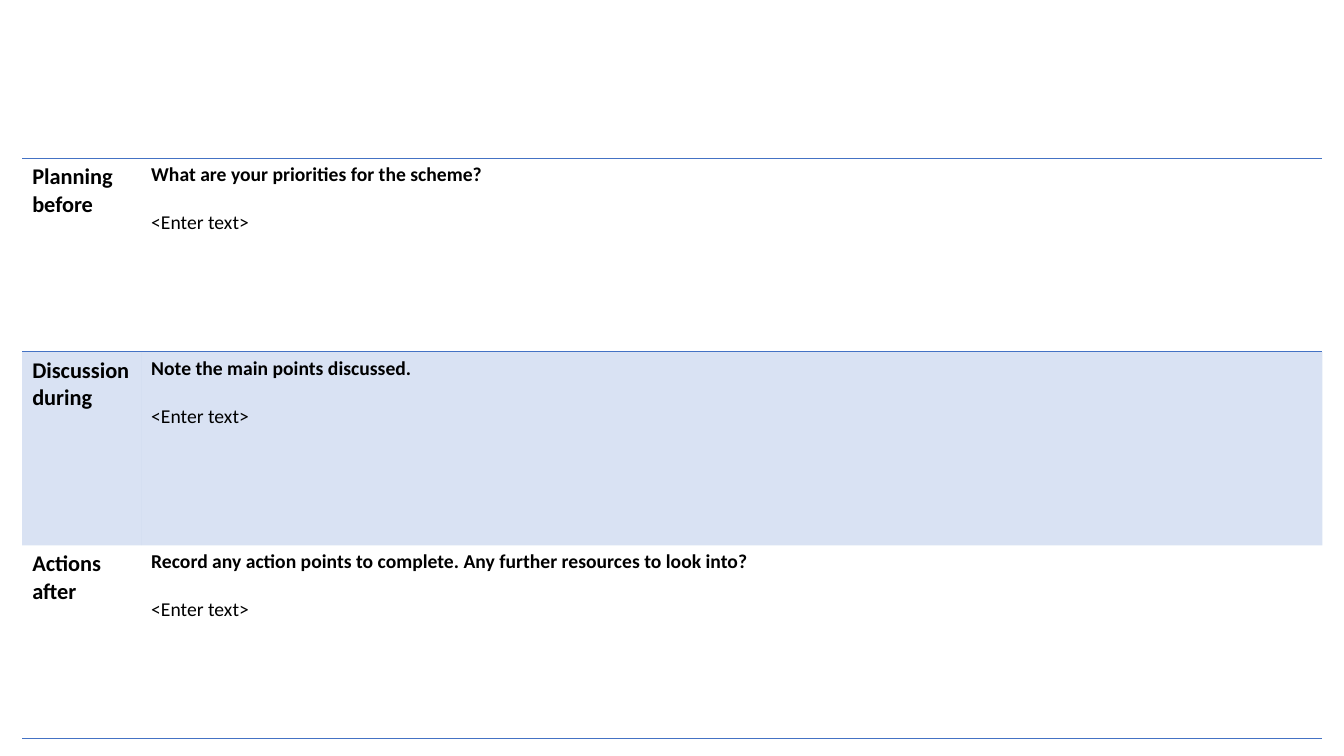
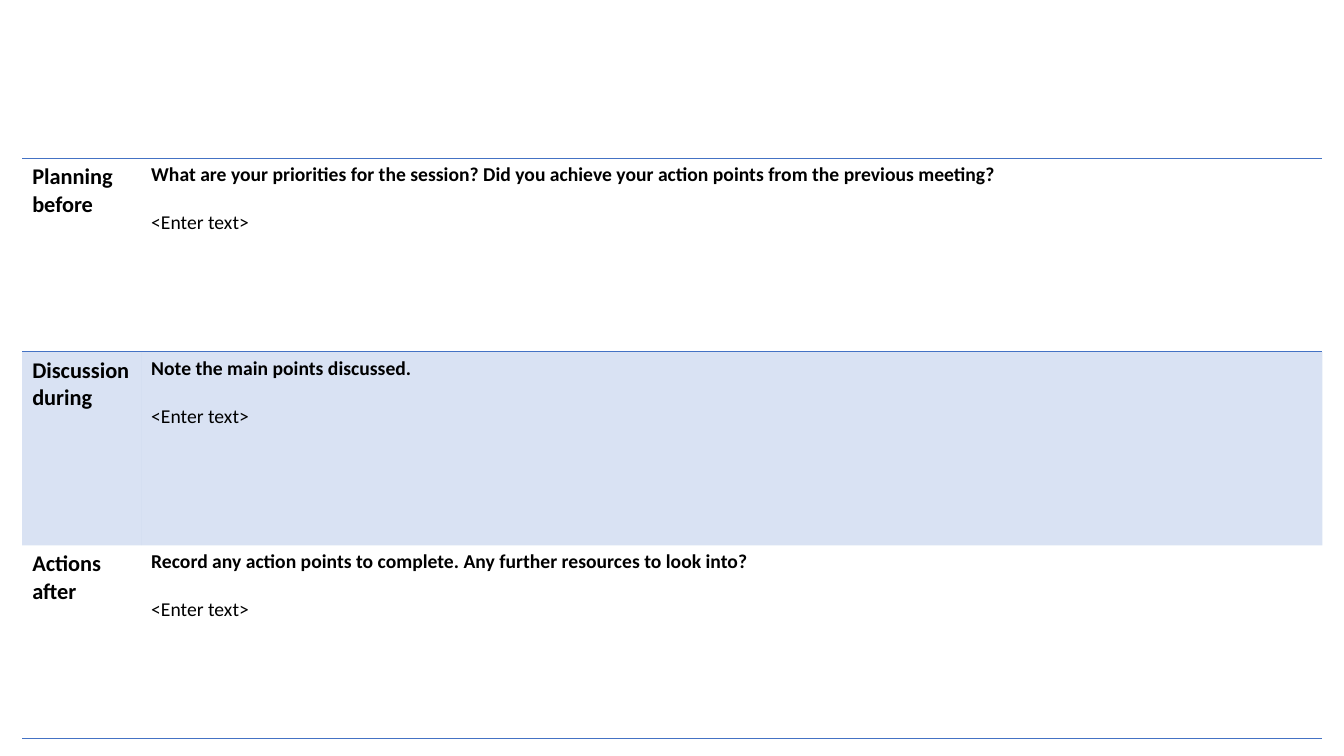
from lxml import etree
from pptx import Presentation
from pptx.dml.color import RGBColor
from pptx.oxml.ns import qn
from pptx.util import Pt

BLUE = RGBColor(0x44, 0x72, 0xC4)
BLACK = RGBColor(0, 0, 0)
FONT = "Calibri"
BAND_OPACITY = 20  # percent
NO_STYLE_NO_GRID = "{2D5ABB26-0587-4C30-8999-92F81FD0307C}"

TABLE_BOX = (Pt(15.84), Pt(113.04), Pt(928.8), Pt(414.72))
LABEL_WIDTH = Pt(84.96)
BLANK_LINE = Pt(17.1)

LABEL_FORMAT = {"size": Pt(16), "bold": True}
PROMPT_FORMAT = {"size": Pt(14), "bold": True}
ENTRY_FORMAT = {"size": Pt(14), "bold": False}

STAGES = ("Planning before", "Discussion during", "Actions after")
PRIORITIES = (
    "What are your priorities for the scheme?",
    "What are your priorities for the session? "
    "Did you achieve your action points from the previous meeting?",
)
LATER_PROMPTS = (
    "Note the main points discussed.",
    "Record any action points to complete. Any further resources to look into?",
)


def write(paragraph, text, font_format):
    run = paragraph.add_run()
    run.text = text
    run.font.name = FONT
    run.font.color.rgb = BLACK
    for name, value in font_format.items():
        setattr(run.font, name, value)


def add_border(cell, side):
    """Draw one edge of a cell; call top before bottom, and before filling."""
    properties = cell._tc.get_or_add_tcPr()
    line = etree.SubElement(properties, qn(f"a:{side}"), w=str(Pt(1)))
    fill = etree.SubElement(line, qn("a:solidFill"))
    etree.SubElement(fill, qn("a:srgbClr"), val=str(BLUE))


def fill_band(cell):
    cell.fill.solid()
    cell.fill.fore_color.rgb = BLUE
    color = cell._tc.tcPr.find(f"{qn('a:solidFill')}/{qn('a:srgbClr')}")
    etree.SubElement(color, qn("a:alpha"), val=str(BAND_OPACITY * 1000))


def add_meeting_table(slide, box, prompts):
    left, top, width, height = box
    row_count = len(STAGES)
    table = slide.shapes.add_table(row_count, 2, left, top, width, height).table
    table._tbl.tblPr.find(qn("a:tableStyleId")).text = NO_STYLE_NO_GRID
    table.first_row = table.horz_banding = False
    table.columns[0].width = LABEL_WIDTH
    table.columns[1].width = width - LABEL_WIDTH

    for index, (stage, prompt) in enumerate(zip(STAGES, prompts)):
        row = table.rows[index]
        row.height = height // row_count
        label, notes = row.cells

        # Stage name, then the prompt with its entry line
        write(label.text_frame.paragraphs[0], stage, LABEL_FORMAT)
        write(notes.text_frame.paragraphs[0], prompt, PROMPT_FORMAT)
        entry = notes.text_frame.add_paragraph()
        entry.space_before = BLANK_LINE
        write(entry, "<Enter text>", ENTRY_FORMAT)

        # Rules around the first row and under the last, band on odd rows
        for cell in (label, notes):
            if index == 0:
                add_border(cell, "lnT")
            if index in (0, row_count - 1):
                add_border(cell, "lnB")
            if index % 2:
                fill_band(cell)
            else:
                cell.fill.background()


def main():
    presentation = Presentation()
    presentation.slide_width = Pt(960)
    presentation.slide_height = Pt(540)
    blank_layout = presentation.slide_layouts[6]
    for priority in PRIORITIES:
        slide = presentation.slides.add_slide(blank_layout)
        add_meeting_table(slide, TABLE_BOX, (priority, *LATER_PROMPTS))
    presentation.save("out.pptx")


if __name__ == "__main__":
    main()
